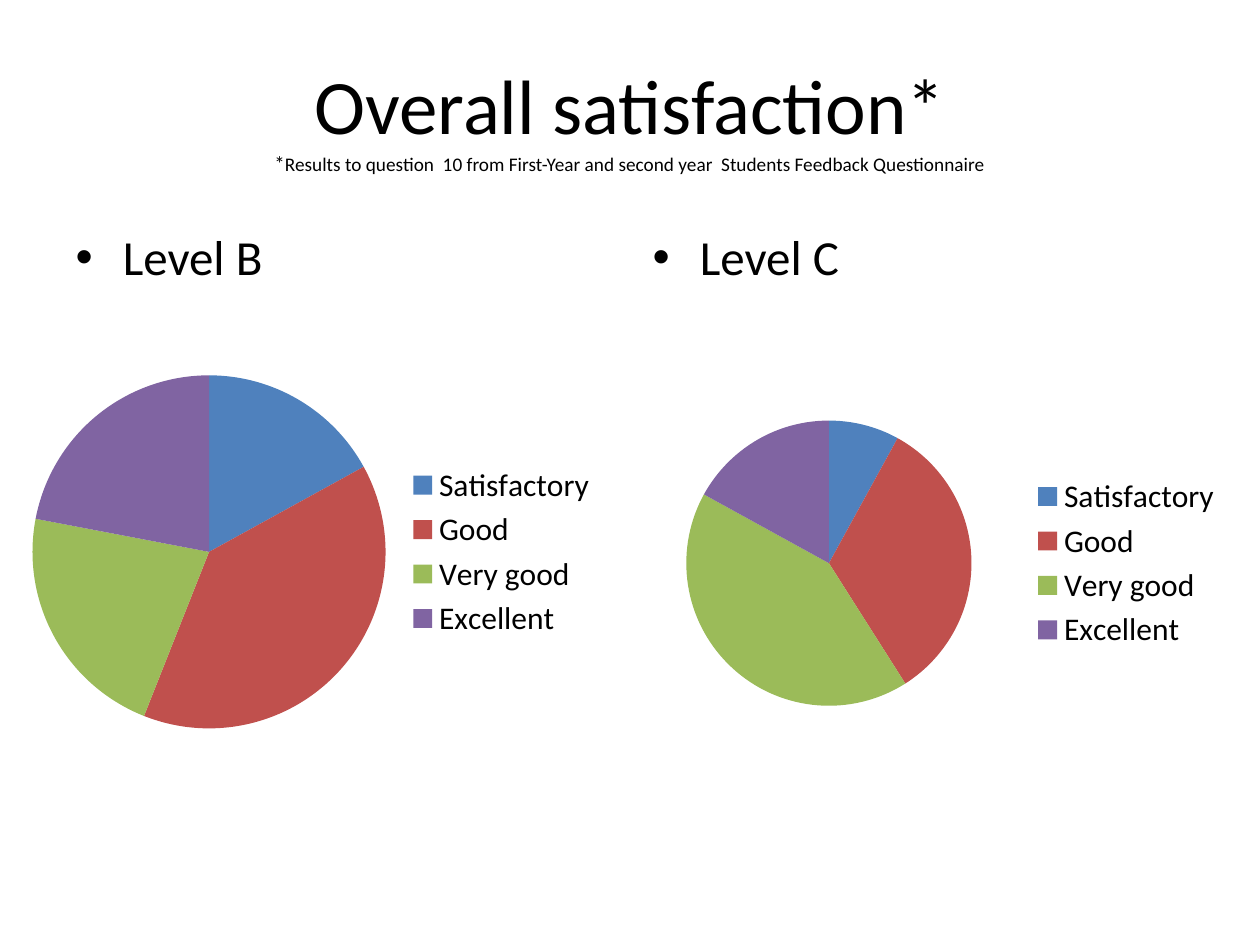
from pptx import Presentation
from pptx.chart.data import CategoryChartData
from pptx.dml.color import RGBColor
from pptx.enum.chart import XL_CHART_TYPE, XL_LEGEND_POSITION
from pptx.enum.text import MSO_ANCHOR, PP_ALIGN
from pptx.util import Inches, Pt

FONT = "Calibri"
BLACK = RGBColor(0x00, 0x00, 0x00)
BLUE = RGBColor(0x4F, 0x81, 0xBD)
RED = RGBColor(0xC0, 0x50, 0x4D)
GREEN = RGBColor(0x9B, 0xBB, 0x59)
PURPLE = RGBColor(0x80, 0x64, 0xA2)

HEADING = "Overall satisfaction*"
NOTE_MARK = "*"
NOTE = "Results to question  10 from First-Year and second year  Students Feedback Questionnaire"
RATINGS = {"Satisfactory": BLUE, "Good": RED, "Very good": GREEN, "Excellent": PURPLE}
LEVELS = [
    {"name": "Level B", "left": 0.5, "shares": (17, 39, 22, 22), "pie": (0.12, 1.94, 4.72, 4.88)},
    {"name": "Level C", "left": 5.08, "shares": (8, 33, 42, 17), "pie": (5, 3.2, 4.8, 2.54)},
]


def place(placeholder, left, top, width, height):
    placeholder.left, placeholder.top = Inches(left), Inches(top)
    placeholder.width, placeholder.height = Inches(width), Inches(height)


def style(font, size):
    font.name = FONT
    font.size = Pt(size)
    font.color.rgb = BLACK


def add_pie(slide, shares, box):
    data = CategoryChartData()
    data.categories = list(RATINGS)
    data.add_series("Series 1", shares)
    pie = slide.shapes.add_chart(XL_CHART_TYPE.PIE, *map(Inches, box), data).chart
    style(pie.font, 18)
    pie.has_title = False
    pie.has_legend = True
    pie.legend.position = XL_LEGEND_POSITION.RIGHT
    pie.legend.include_in_layout = False
    pie.plots[0].vary_by_categories = True
    for index, color in enumerate(RATINGS.values()):
        fill = pie.plots[0].series[0].points[index].format.fill
        fill.solid()
        fill.fore_color.rgb = color


def main():
    deck = Presentation()
    deck.slide_width, deck.slide_height = Inches(10), Inches(7.5)
    slide = deck.slides.add_slide(deck.slide_layouts.get_by_name("Two Content"))
    title, *bodies = slide.placeholders

    place(title, 0.5, 0.3, 9, 1.25)
    title.text_frame.vertical_anchor = MSO_ANCHOR.MIDDLE
    heading = title.text_frame.paragraphs[0]
    heading.text = f"{HEADING}\v{NOTE_MARK}"
    heading.alignment = PP_ALIGN.CENTER
    heading.add_run().text = NOTE
    for run, size in zip(heading.runs, (44, 12, 11)):
        style(run.font, size)

    for body, level in zip(bodies, LEVELS):
        place(body, level["left"], 1.75, 4.42, 4.95)
        body.text_frame.text = level["name"]
        style(body.text_frame.paragraphs[0].runs[0].font, 28)
        add_pie(slide, level["shares"], level["pie"])

    deck.save("out.pptx")


if __name__ == "__main__":
    main()
